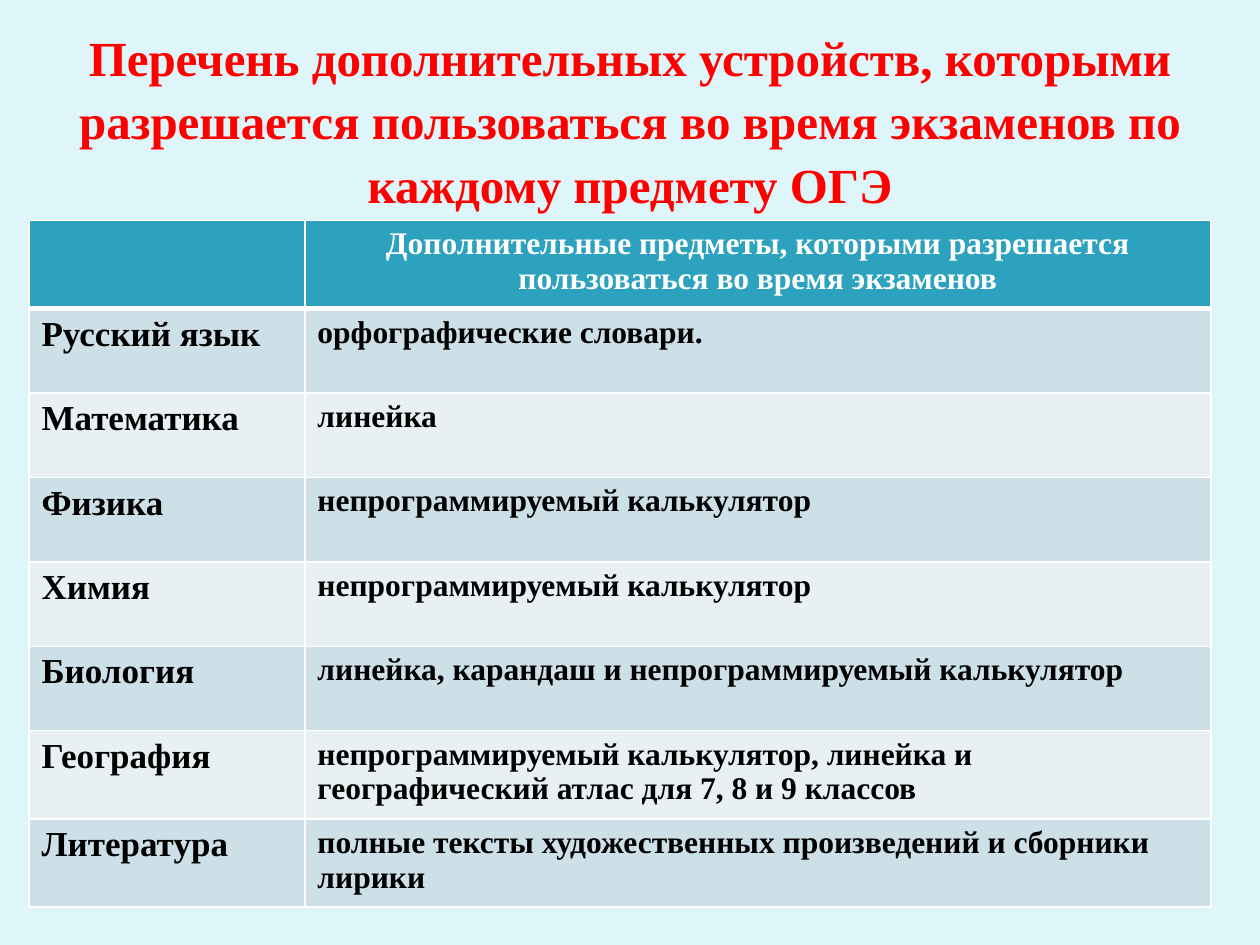
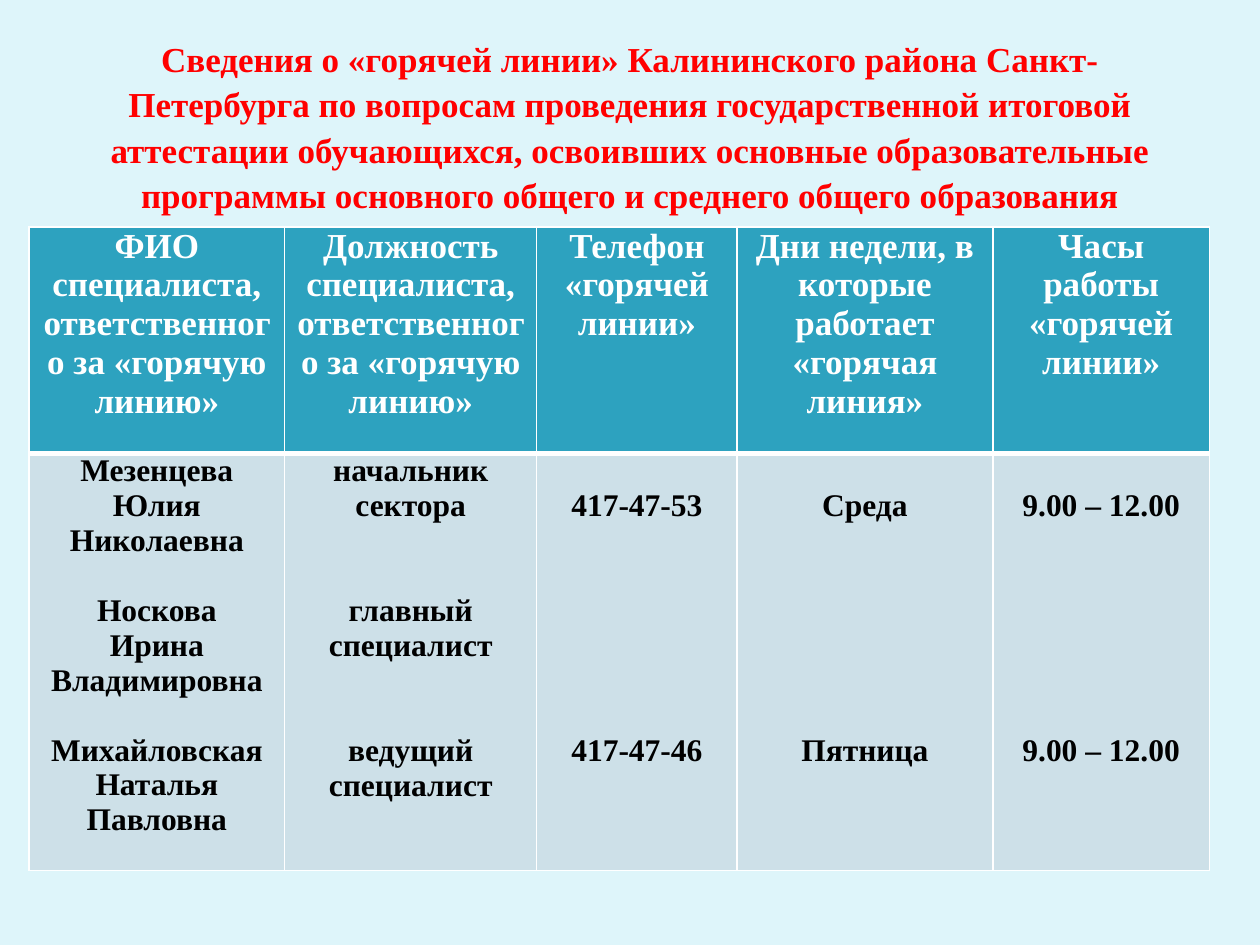
from dataclasses import dataclass
from typing import NamedTuple

import pptx
import pptx.dml.color
import pptx.enum.text
import pptx.oxml
import pptx.oxml.ns
import pptx.util
from pptx.util import Inches

FONT = "Times New Roman"
PAGE, RED, TEAL = "DEF5FA", "FF0000", "2DA2BF"
WHITE, BLACK = "FFFFFF", "000000"
BANDS = ("CDE0E8", "E8F0F4")
LINE = 20  # height in points of one line of 18 pt text
CENTER = pptx.enum.text.PP_ALIGN.CENTER
LEFT = pptx.enum.text.PP_ALIGN.LEFT


class Para(NamedTuple):
    text: str
    gap: int = 0  # lines left free above


@dataclass
class Title:
    text: str
    size: int
    top: float
    height: float
    foot: float = 0.05


@dataclass
class Grid:
    top: float
    cols: list[float]
    rows: list[float]
    cells: list[list[list[Para]]]
    head: int
    sizes: list[int]
    align: pptx.enum.text.PP_ALIGN
    side: float = 0.1
    pad: float = 0.05


def color(code: str) -> pptx.dml.color.RGBColor:
    return pptx.dml.color.RGBColor.from_string(code)


def style(para, size: int, code: str, align) -> None:
    para.alignment = align
    for run in para.runs:
        run.font.name = FONT
        run.font.size = pptx.util.Pt(size)
        run.font.bold = True
        run.font.color.rgb = color(code)


def border(cell, row: int) -> None:
    """Draw white edges, with a thick one under the header row."""
    props = cell._tc.get_or_add_tcPr()
    widths = {"L": 1, "R": 1, "T": 3 if row == 1 else 1, "B": 3 if row == 0 else 1}
    for spot, (side, width) in enumerate(widths.items()):
        edge = pptx.oxml.parse_xml(
            f'<a:ln{side} {pptx.oxml.ns.nsdecls("a")} w="{pptx.util.Pt(width)}">'
            f'<a:solidFill><a:srgbClr val="{WHITE}"/></a:solidFill></a:ln{side}>'
        )
        props.insert(spot, edge)


def add_title(slide, title: Title) -> None:
    box = slide.shapes.add_textbox(
        Inches(0.5), Inches(title.top), Inches(9), Inches(title.height)
    )
    frame = box.text_frame
    frame.word_wrap = True
    frame.vertical_anchor = pptx.enum.text.MSO_ANCHOR.MIDDLE
    frame.margin_bottom = Inches(title.foot)
    frame.text = title.text
    frame.paragraphs[0].line_spacing = 1.08
    style(frame.paragraphs[0], title.size, RED, CENTER)


def fill_cell(cell, paras: list[Para], grid: Grid, row: int, col: int) -> None:
    is_head = row == 0
    cell.fill.solid()
    cell.fill.fore_color.rgb = color(TEAL if is_head else BANDS[(row - 1) % 2])
    border(cell, row)
    cell.margin_left = cell.margin_right = Inches(grid.side)
    cell.margin_top = Inches(grid.pad) + pptx.util.Pt(LINE * paras[0].gap)
    cell.margin_bottom = Inches(grid.pad)
    frame = cell.text_frame
    for spot, item in enumerate(paras):
        para = frame.add_paragraph() if spot else frame.paragraphs[0]
        para.text = item.text
        if spot and item.gap:
            para.space_before = pptx.util.Pt(LINE * item.gap)
        size = grid.head if is_head else grid.sizes[col]
        style(para, size, WHITE if is_head else BLACK, CENTER if is_head else grid.align)


def add_grid(slide, grid: Grid) -> None:
    table = slide.shapes.add_table(
        len(grid.rows), len(grid.cols), Inches(0.23), Inches(grid.top),
        Inches(sum(grid.cols)), Inches(sum(grid.rows)),
    ).table
    for col, width in zip(table.columns, grid.cols):
        col.width = Inches(width)
    for row, height in zip(table.rows, grid.rows):
        row.height = Inches(height)
    for row, line in enumerate(grid.cells):
        for col, paras in enumerate(line):
            fill_cell(table.cell(row, col), paras, grid, row, col)


def plain(*texts: str) -> list[list[Para]]:
    """Make a table row with one paragraph in each cell."""
    return [[Para(text)] for text in texts]


def shift(first: str, last: str) -> list[Para]:
    """Make a cell whose two values stand beside the first and last person."""
    return [Para(first, 1), Para(last, 6)]


CALC = "непрограммируемый калькулятор"
TOOLS = [
    plain("", "Дополнительные предметы, которыми разрешается пользоваться во время экзаменов"),
    plain("Русский язык", "орфографические словари."),
    plain("Математика", "линейка"),
    plain("Физика", CALC),
    plain("Химия", CALC),
    plain("Биология", f"линейка, карандаш и {CALC}"),
    plain("География", f"{CALC}, линейка и географический атлас для 7, 8 и 9 классов"),
    plain("Литература", "полные тексты художественных произведений и сборники лирики"),
]
HOURS = "9.00 – 12.00"
HOTLINE = [
    plain(
        "ФИО специалиста, ответственного за «горячую линию»",
        "Должность специалиста, ответственного за «горячую линию»",
        "Телефон «горячей линии»",
        "Дни недели, в которые работает «горячая линия»",
        "Часы работы «горячей линии»",
    ),
    [
        [
            Para("Мезенцева Юлия Николаевна"),
            Para("Носкова", 1),
            Para("Ирина Владимировна"),
            Para("Михайловская Наталья Павловна", 1),
        ],
        [
            Para("начальник сектора"),
            Para("главный специалист", 2),
            Para("ведущий специалист", 2),
        ],
        shift("417-47-53", "417-47-46"),
        shift("Среда", "Пятница"),
        shift(HOURS, HOURS),
    ],
]
SLIDES = [
    (
        Title(
            "Перечень дополнительных устройств, которыми разрешается "
            "пользоваться во время экзаменов по каждому предмету ОГЭ",
            28, 0.23, 1.41,
        ),
        Grid(1.75, [2.19, 7.19], [0.67] * len(TOOLS), TOOLS, 18, [20, 18], LEFT),
    ),
    (
        Title(
            "Сведения о «горячей линии» Калининского района Санкт-Петербурга "
            "по вопросам проведения государственной итоговой аттестации "
            "обучающихся, освоивших основные образовательные программы "
            "основного общего и среднего общего образования",
            20, 0.3, 1.65, 0.32,
        ),
        Grid(
            1.8, [2.03, 2, 1.59, 2.03, 1.72], [1.8, 3.31], HOTLINE,
            20, [18] * 5, CENTER, 0.07, 0,
        ),
    ),
]


def main() -> None:
    deck = pptx.Presentation()
    deck.slide_width, deck.slide_height = Inches(10), Inches(7.5)
    for title, grid in SLIDES:
        slide = deck.slides.add_slide(deck.slide_layouts[6])
        slide.background.fill.solid()
        slide.background.fill.fore_color.rgb = color(PAGE)
        add_title(slide, title)
        add_grid(slide, grid)
    deck.save("out.pptx")


if __name__ == "__main__":
    main()
